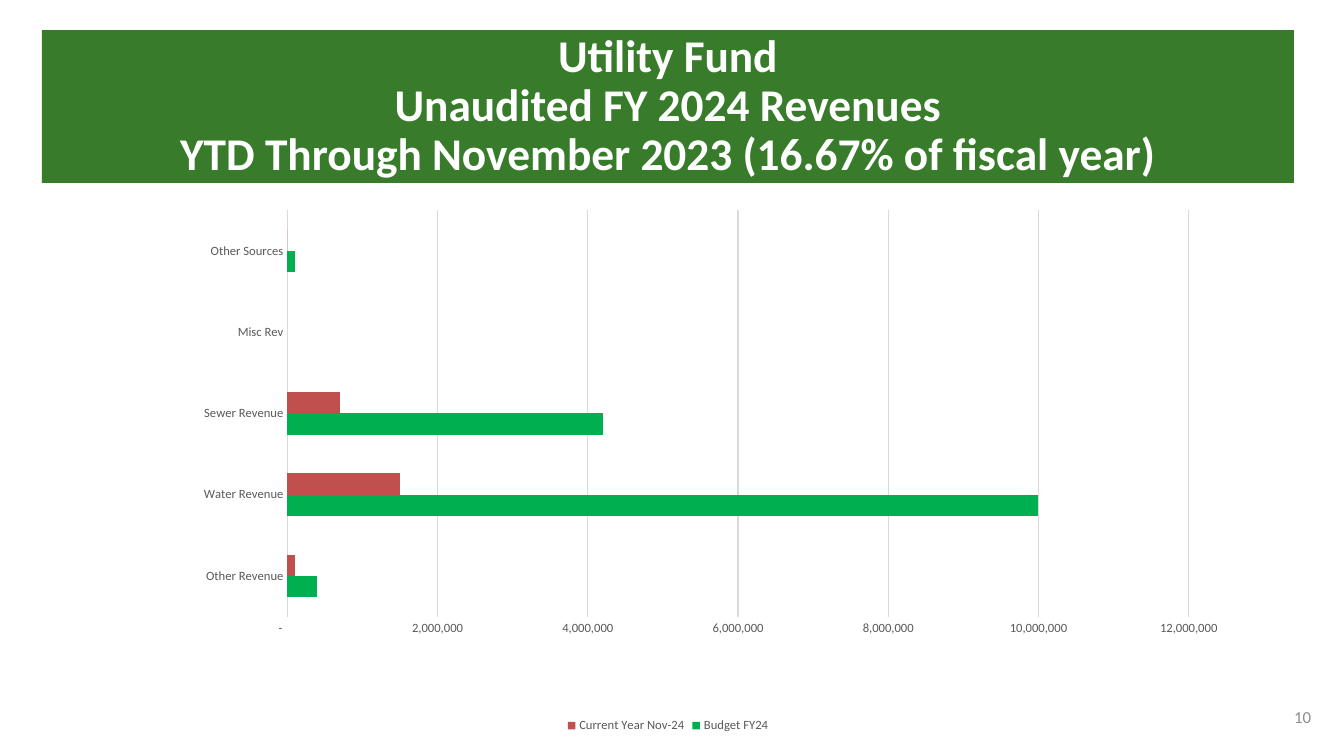
from dataclasses import dataclass

from lxml import etree
from pptx import Presentation
from pptx import util as u
from pptx.chart.chart import Chart
from pptx.chart.data import CategoryChartData
from pptx.dml.color import RGBColor
from pptx.enum import chart as charts, shapes, text
from pptx.oxml.ns import qn
from pptx.slide import Slide
from pptx.text.text import Font, TextFrame

EMU_PER_PX = 914400 / 100.8


@dataclass(frozen=True)
class Theme:
    font: str = "Calibri"
    banner: str = "387C2B"
    title: str = "FFFFFF"
    page: str = "8C8C8C"
    label: str = "595959"
    grid: str = "D9D9D9"
    budget: str = "00B050"
    current: str = "C0504D"
    title_size: float = 32.4
    title_spacing: float = 0.9
    page_size: float = 12
    label_size: float = 9
    line_width: float = 0.75


@dataclass(frozen=True)
class Box:
    left: int
    top: int
    width: int
    height: int

    def emu(self) -> tuple[u.Emu, ...]:
        return tuple(px(side) for side in (self.left, self.top, self.width, self.height))


@dataclass(frozen=True)
class Series:
    name: str
    values: tuple[int | None, ...]
    color: str


THEME = Theme()
BANNER = Box(42, 30, 1252, 153)
CHART = Box(42, 185, 1252, 552)
PAGE_NUMBER = Box(1008, 697, 313, 40)
PLOT = {"x": 0.196, "y": 0.046, "w": 0.72, "h": 0.736}
TITLE = (
    "Utility Fund",
    "Unaudited FY 2024 Revenues",
    "YTD Through November 2023 (16.67% of fiscal year)",
)
CATEGORIES = ("Other Revenue", "Water Revenue", "Sewer Revenue", "Misc Rev", "Other Sources")
SERIES = (
    Series("Budget FY24", (400_000, 10_000_000, 4_200_000, None, 100_000), THEME.budget),
    Series("Current Year Nov-24", (100_000, 1_500_000, 700_000, None, 0), THEME.current),
)
NUMBER_FORMAT = '_(* #,##0_);_(* \\(#,##0\\);_(* "-"??_);_(@_)'


def px(length: int) -> u.Emu:
    return u.Emu(round(length * EMU_PER_PX))


def style_font(font: Font, size: float, color: str, bold: bool = False) -> None:
    font.name = THEME.font
    font.size = u.Pt(size)
    font.bold = bold
    font.color.rgb = RGBColor.from_string(color)


def write_lines(frame: TextFrame, lines: tuple[str, ...], align: text.PP_ALIGN, size: float,
                color: str, bold: bool = False, spacing: float = 1.0) -> None:
    frame.word_wrap = True
    frame.vertical_anchor = text.MSO_ANCHOR.MIDDLE
    for index, line in enumerate(lines):
        paragraph = frame.add_paragraph() if index else frame.paragraphs[0]
        paragraph.text = line
        paragraph.alignment = align
        paragraph.line_spacing = spacing
        style_font(paragraph.font, size, color, bold)


def add_banner(slide: Slide) -> None:
    shape = slide.shapes.add_shape(shapes.MSO_SHAPE.RECTANGLE, *BANNER.emu())
    shape.shadow.inherit = False
    shape.fill.solid()
    shape.fill.fore_color.rgb = RGBColor.from_string(THEME.banner)
    shape.line.fill.background()
    shape.text_frame.margin_top = shape.text_frame.margin_bottom = 0
    write_lines(shape.text_frame, TITLE, text.PP_ALIGN.CENTER, THEME.title_size,
                THEME.title, bold=True, spacing=THEME.title_spacing)


def add_page_number(slide: Slide) -> None:
    frame = slide.shapes.add_textbox(*PAGE_NUMBER.emu()).text_frame
    write_lines(frame, ("10",), text.PP_ALIGN.RIGHT, THEME.page_size, THEME.page)


def place_plot(chart: Chart) -> None:
    """Fix the inner plot area at fractions of the chart."""
    plot_area = chart._chartSpace.find(f".//{qn('c:plotArea')}")
    for old_layout in plot_area.findall(qn("c:layout")):
        plot_area.remove(old_layout)
    layout = etree.Element(qn("c:layout"))
    manual = etree.SubElement(layout, qn("c:manualLayout"))
    settings = {"layoutTarget": "inner", "xMode": "edge", "yMode": "edge", **PLOT}
    for tag, value in settings.items():
        etree.SubElement(manual, qn(f"c:{tag}")).set("val", str(value))
    plot_area.insert(0, layout)


def style_axes(chart: Chart) -> None:
    category_axis, value_axis = chart.category_axis, chart.value_axis
    for axis in (category_axis, value_axis):
        axis.major_tick_mark = axis.minor_tick_mark = charts.XL_TICK_MARK.NONE
        style_font(axis.tick_labels.font, THEME.label_size, THEME.label)
    value_axis.minimum_scale = 0
    value_axis.maximum_scale = 12_000_000
    value_axis.major_unit = 2_000_000
    value_axis.tick_labels.number_format = NUMBER_FORMAT
    value_axis.tick_labels.number_format_is_linked = False
    value_axis.format.line.fill.background()
    category_axis.has_major_gridlines = False
    value_axis.has_major_gridlines = True
    for line in (category_axis.format.line, value_axis.major_gridlines.format.line):
        line.color.rgb = RGBColor.from_string(THEME.grid)
        line.width = u.Pt(THEME.line_width)


def add_revenue_chart(slide: Slide) -> None:
    data = CategoryChartData(number_format=NUMBER_FORMAT)
    data.categories = CATEGORIES
    for series in SERIES:
        data.add_series(series.name, series.values)
    chart = slide.shapes.add_chart(charts.XL_CHART_TYPE.BAR_CLUSTERED, *CHART.emu(), data).chart
    style_font(chart.font, THEME.label_size, THEME.label)
    chart.has_title = False
    chart.has_legend = True
    chart.legend.position = charts.XL_LEGEND_POSITION.BOTTOM
    chart.legend.include_in_layout = False
    style_font(chart.legend.font, THEME.label_size, THEME.label)

    plot = chart.plots[0]
    plot.gap_width = 182
    plot.overlap = 0
    plot.vary_by_categories = False
    for bars, series in zip(plot.series, SERIES):
        bars.invert_if_negative = False
        bars.format.fill.solid()
        bars.format.fill.fore_color.rgb = RGBColor.from_string(series.color)
    style_axes(chart)
    place_plot(chart)


def main() -> None:
    presentation = Presentation()
    presentation.slide_width = px(1344)
    presentation.slide_height = px(756)
    slide = presentation.slides.add_slide(presentation.slide_layouts[6])
    add_page_number(slide)
    add_banner(slide)
    add_revenue_chart(slide)
    presentation.save("out.pptx")


if __name__ == "__main__":
    main()
